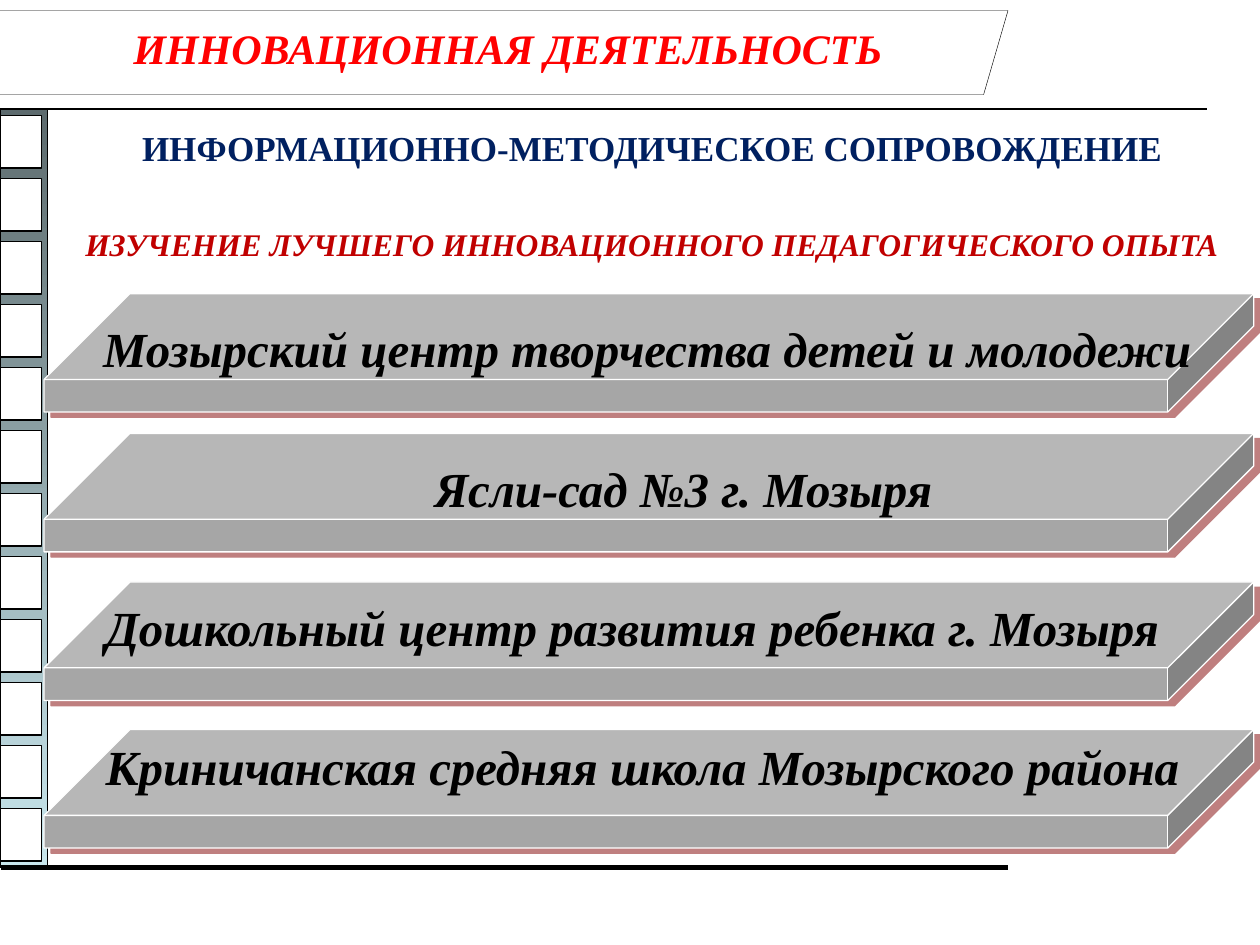
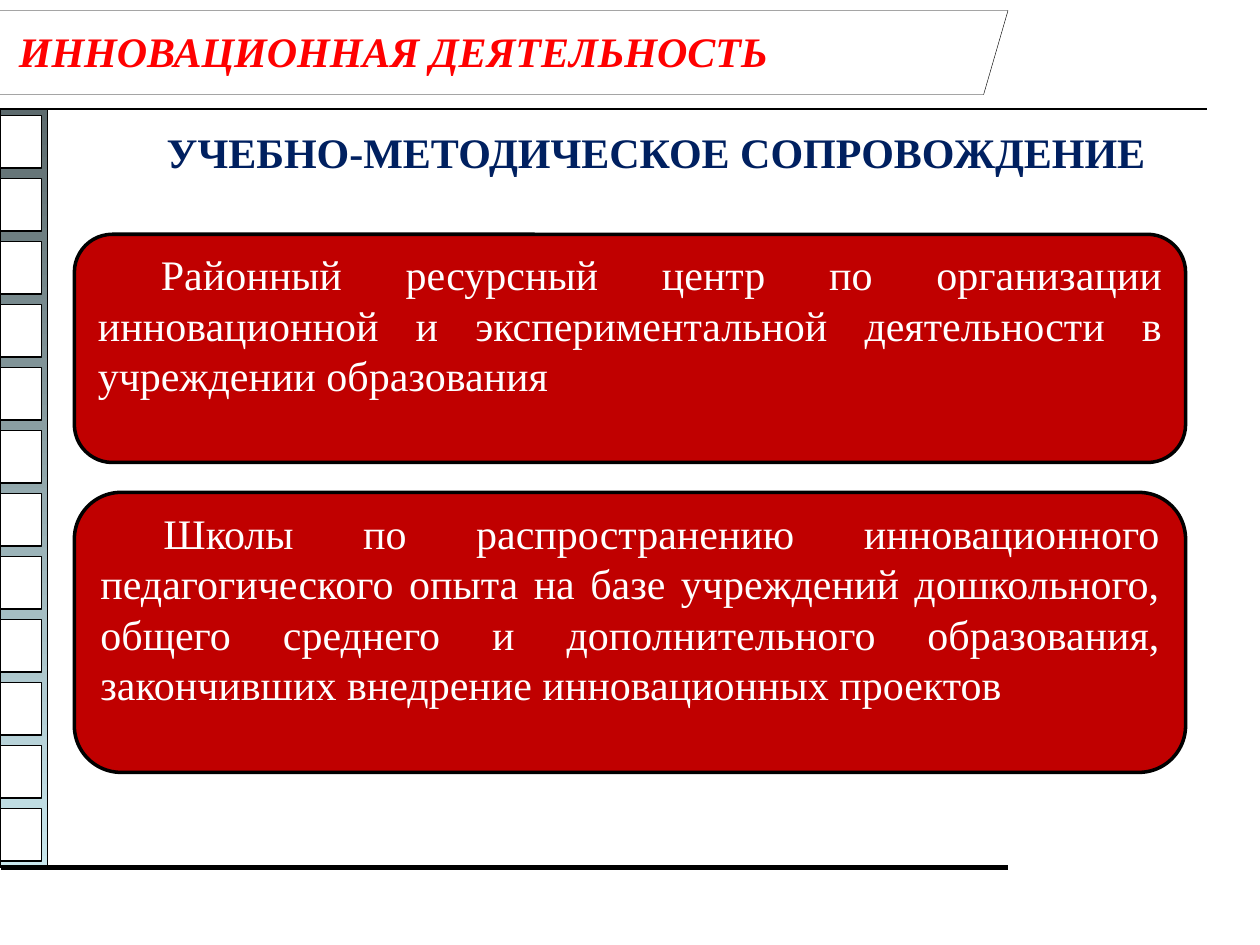
from dataclasses import dataclass

from lxml import etree
from pptx import Presentation
from pptx.dml.color import RGBColor
from pptx.enum import shapes, text
from pptx.oxml.ns import qn
from pptx.util import Pt

SHAPE = shapes.MSO_SHAPE
ALIGN = text.PP_ALIGN


@dataclass(frozen=True)
class Theme:
    font: str = "Times New Roman"
    white: str = "FFFFFF"
    black: str = "000000"
    title: str = "FF0000"
    heading: str = "002060"
    accent: str = "C00000"
    slab: str = "A6A6A6"
    slab_shadow: str = "800000"
    strip_top: str = "5D6B6E"
    strip_bottom: str = "C9E7ED"
    large: int = 28
    normal: int = 24
    small: int = 20
    note: int = 18


THEME = Theme()


def rgb(value):
    return RGBColor.from_string(value)


def add_box(parent, kind, box, fill, line, width):
    shape = parent.add_shape(kind, *map(Pt, box))
    shape.shadow.inherit = False
    shape.fill.solid()
    shape.fill.fore_color.rgb = rgb(fill)
    shape.line.color.rgb = rgb(line)
    shape.line.width = Pt(width)
    return shape


def add_rule(slide, left, right, y, width):
    rule = slide.shapes.add_connector(
        shapes.MSO_CONNECTOR.STRAIGHT, Pt(left), Pt(y), Pt(right), Pt(y))
    rule.line.color.rgb = rgb(THEME.black)
    rule.line.width = Pt(width)
    etree.SubElement(rule.element.spPr, qn("a:effectLst"))


def format_paragraph(paragraph, size, color, bold=False, italic=False,
                     align=ALIGN.LEFT, before=0, indent=0):
    """Style a paragraph; indent moves its first line only."""
    properties = paragraph._p.get_or_add_pPr()
    properties.set("marL", "0")
    properties.set("indent", str(Pt(indent)))
    paragraph.alignment = align
    paragraph.space_before = Pt(before)
    font = paragraph.font
    font.name, font.size = THEME.font, Pt(size)
    font.bold, font.italic = bold, italic
    font.color.rgb = rgb(color)


def add_film_strip(slide, box):
    left, top, width, height = box
    strip = add_box(slide.shapes, SHAPE.RECTANGLE, box,
                    THEME.strip_top, THEME.black, 0.75)
    strip.fill.gradient()
    strip.fill.gradient_angle = 270
    for stop, position, color in zip(strip.fill.gradient_stops, (0, 1),
                                     (THEME.strip_top, THEME.strip_bottom)):
        stop.position = position
        stop.color.rgb = rgb(color)
    frames = slide.shapes.add_group_shape()
    for index in range(12):
        frame = (left, top + 3.6 + 36 * index, width - 3.4, 30)
        add_box(frames.shapes, SHAPE.RECTANGLE, frame,
                THEME.white, THEME.black, 0.75)


def add_framed_slide(presentation, title_left, title_top):
    slide = presentation.slides.add_slide(presentation.slide_layouts[5])
    banner = add_box(slide.shapes, SHAPE.PARALLELOGRAM, (-24, 6, 600, 48),
                     THEME.white, THEME.black, 0.25)
    banner.adjustments[0] = 0.29
    add_film_strip(slide, (0, 62.5, 27.2, 433.2))
    add_rule(slide, -1.5, 690, 62.5, 1)
    add_rule(slide, 0.5, 576, 495.6, 3)

    title = slide.shapes.title
    title.left, title.top = Pt(title_left), Pt(title_top)
    title.width, title.height = Pt(612), Pt(54)
    frame = title.text_frame
    frame.text = "ИННОВАЦИОННАЯ ДЕЯТЕЛЬНОСТЬ"
    frame.auto_size = text.MSO_AUTO_SIZE.NONE
    frame.vertical_anchor = text.MSO_ANCHOR.MIDDLE
    format_paragraph(frame.paragraphs[0], THEME.normal, THEME.title, True, True)
    title.element.getparent().append(title.element)  # in front of the banner
    return slide


def add_body(slide, box, lines):
    """Add a text box from (wording, paragraph format) pairs."""
    frame = slide.shapes.add_textbox(*map(Pt, box)).text_frame
    frame.word_wrap = True
    for index, (wording, style) in enumerate(lines):
        paragraph = frame.add_paragraph() if index else frame.paragraphs[0]
        paragraph.text = wording
        format_paragraph(paragraph, bold=True, **style)


def add_slab(slide, box):
    slab = add_box(slide.shapes, SHAPE.CUBE, box, THEME.slab, THEME.white, 0.75)
    slab.adjustments[0] = 0.725
    effects = slab.element.spPr.find(qn("a:effectLst"))
    shadow = etree.SubElement(effects, qn("a:outerShdw"), dist=str(Pt(5)),
                              dir=str(37 * 60000), algn="ctr", rotWithShape="0")
    color = etree.SubElement(shadow, qn("a:srgbClr"), val=THEME.slab_shadow)
    etree.SubElement(color, qn("a:alpha"), val="50000")


def add_card(slide, box, wording):
    card = add_box(slide.shapes, SHAPE.ROUNDED_RECTANGLE, box,
                   THEME.accent, THEME.black, 2)
    frame = card.text_frame
    frame.word_wrap = True
    frame.vertical_anchor = text.MSO_ANCHOR.MIDDLE
    frame.margin_bottom = Pt(31)
    frame.text = wording
    format_paragraph(frame.paragraphs[0], THEME.normal, THEME.white,
                     align=ALIGN.JUSTIFY, indent=36)


def build_experience_slide(presentation):
    slide = add_framed_slide(presentation, 69, 0)
    for top in (167.8, 247.7, 332.6, 416.9):
        add_slab(slide, (25.2, top, 691.2, 67.7))
    lines = [
        ("ИНФОРМАЦИОННО-МЕТОДИЧЕСКОЕ СОПРОВОЖДЕНИЕ",
         dict(size=THEME.small, color=THEME.heading, align=ALIGN.CENTER)),
        ("ИЗУЧЕНИЕ ЛУЧШЕГО ИННОВАЦИОННОГО ПЕДАГОГИЧЕСКОГО ОПЫТА",
         dict(size=THEME.note, color=THEME.accent, italic=True,
              align=ALIGN.CENTER, before=32)),
    ]
    institutions = [
        ("Мозырский центр творчества детей и молодежи", 26.6, 32),
        ("Ясли-сад №3 г. Мозыря", 216, 46),
        ("Дошкольный центр развития ребенка г. Мозыря", 28, 46),
        ("Криничанская средняя школа Мозырского района", 28, 46),
    ]
    lines += [(name, dict(size=THEME.large, color=THEME.black, italic=True,
                          indent=indent, before=before))
              for name, indent, before in institutions]
    add_body(slide, (25.2, 69, 694.8, 430), lines)


def build_support_slide(presentation):
    slide = add_framed_slide(presentation, 3.6, 2)
    add_body(slide, (30, 69, 690, 40), [
        ("УЧЕБНО-МЕТОДИЧЕСКОЕ СОПРОВОЖДЕНИЕ",
         dict(size=THEME.normal, color=THEME.heading, align=ALIGN.CENTER))])
    add_card(slide, (42.5, 133.9, 635, 130.4),
             "Районный ресурсный центр по организации инновационной и "
             "экспериментальной деятельности в учреждении образования")
    add_card(slide, (42.5, 281.4, 635, 160),
             "Школы по распространению инновационного педагогического опыта "
             "на базе учреждений дошкольного, общего среднего и "
             "дополнительного образования, закончивших внедрение "
             "инновационных проектов")


def main():
    presentation = Presentation()
    presentation.slide_width, presentation.slide_height = Pt(720), Pt(540)
    build_experience_slide(presentation)
    build_support_slide(presentation)
    presentation.save("out.pptx")


if __name__ == "__main__":
    main()
